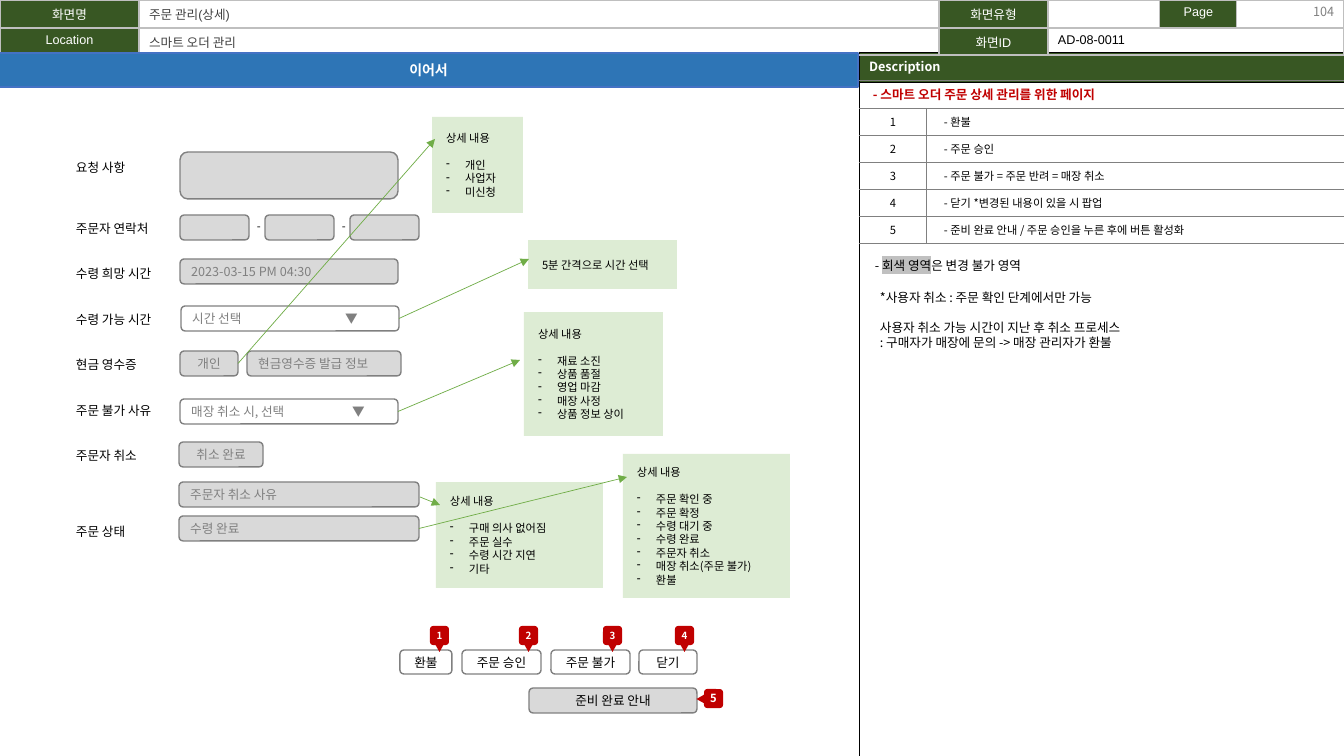
from collections import namedtuple
from lxml.etree import SubElement
from pptx import Presentation
from pptx.dml.color import RGBColor
from pptx.enum.shapes import MSO_CONNECTOR, MSO_SHAPE as SHAPE
from pptx.enum.text import MSO_ANCHOR as ANCHOR, PP_ALIGN as ALIGN
from pptx.oxml.ns import qn
from pptx.util import Pt

Box = namedtuple("Box", "x y w h")
PX_PER_INCH = 100.8
NOTO, ARIAL = "Noto Sans CJK KR", "Arial"
GREEN, RED, GRAY, LIGHT = "385723", "C00000", "808080", "D9D9D9"
WHITE, BLACK, CALLOUT = "FFFFFF", "000000", "70AD47"
LEFT, CENTER = ALIGN.LEFT, ALIGN.CENTER


def px(n):
    return round(n * 914400 / PX_PER_INCH)


def rgb(value):
    return RGBColor.from_string(value)


def place(box, x, y, w, h):
    return px(box.x + x), px(box.y + y), px(w), px(h)


def style_run(run, size, color, font=NOTO, bold=False):
    run.font.size, run.font.bold, run.font.name = Pt(size), bold, font
    run.font.color.rgb = rgb(color)
    if font == NOTO:
        SubElement(run.font._element, qn("a:ea")).set("typeface", font)


def style_text(frame, size, color, align=LEFT, font=NOTO, bold=False):
    for paragraph in frame.paragraphs:
        paragraph.alignment = align
        for run in paragraph.runs:
            style_run(run, size, color, font, bold)
        if not paragraph.runs:
            SubElement(paragraph._p, qn("a:endParaRPr")).set("sz", str(size * 100))


def add_label(slide, box, x, y, w, h, text, size=9, color=BLACK, align=LEFT, anchor=ANCHOR.MIDDLE):
    frame = slide.shapes.add_textbox(*place(box, x, y, w, h)).text_frame
    frame.word_wrap, frame.vertical_anchor = True, anchor
    frame.text = text
    style_text(frame, size, color, align)
    return frame


def add_block(shapes, box, x, y, w, h, text="", fill=LIGHT, line=GRAY, color=GRAY,
              align=LEFT, size=9, bold=False, kind=SHAPE.ROUNDED_RECTANGLE, inset=10):
    block = shapes.add_shape(kind, *place(box, x, y, w, h))
    block.shadow.inherit = False
    block.fill.solid()
    block.fill.fore_color.rgb = rgb(fill)
    if line:
        block.line.color.rgb, block.line.width = rgb(line), Pt(1)
    else:
        block.line.fill.background()
    frame = block.text_frame
    frame.margin_left = frame.margin_right = px(inset)
    frame.margin_top = frame.margin_bottom = 0
    frame.vertical_anchor = ANCHOR.MIDDLE
    frame.text = text
    style_text(frame, size, color, align, bold=bold)
    return block


def set_borders(cell, sides, color, width):
    tc_pr = cell._tc.get_or_add_tcPr()
    for index, side in enumerate("LRTB"):
        line = SubElement(tc_pr, qn(f"a:ln{side}"), w=str(Pt(width)))
        if side in sides:
            fill = SubElement(line, qn("a:solidFill"))
            SubElement(fill, qn("a:srgbClr"), val=color)
        else:
            SubElement(line, qn("a:noFill"))
        tc_pr.insert(index, line)


def add_grid(slide, box, widths, heights):
    table = slide.shapes.add_table(len(heights), len(widths), *place(box, 0, 0, sum(widths), sum(heights))).table
    table.first_row = table.horz_banding = False
    for column, width in zip(table.columns, widths):
        column.width = px(width)
    for row, height in zip(table.rows, heights):
        row.height = px(height)
    return table


def fill_cell(cell, text="", fill=None, size=9, color=BLACK, align=LEFT, font=NOTO, bold=False):
    if fill:
        cell.fill.solid()
        cell.fill.fore_color.rgb = rgb(fill)
    else:
        cell.fill.background()
    cell.text = text
    style_text(cell.text_frame, size, color, align, font, bold)


def add_arrow(slide, box, start, end, source=None):
    (x1, y1), (x2, y2) = start, end
    arrow = slide.shapes.add_connector(
        MSO_CONNECTOR.STRAIGHT, px(box.x + x1), px(box.y + y1), px(box.x + x2), px(box.y + y2))
    if source:
        arrow.begin_connect(source, 3)
    arrow.line.color.rgb, arrow.line.width = rgb(CALLOUT), Pt(0.5)
    SubElement(arrow.line._get_or_add_ln(), qn("a:tailEnd"), type="triangle")
    SubElement(arrow._element.spPr, qn("a:effectLst"))


def add_callout(slide, box, x, y, w, h, heading, items=()):
    panel = add_block(slide.shapes, box, x, y, w, h, "\n".join((heading, *items)), CALLOUT, None,
                      BLACK, size=8, kind=SHAPE.RECTANGLE, inset=14)
    SubElement(panel.fill._xPr.find(qn("a:solidFill"))[0], qn("a:alpha"), val="23000")
    first, *rest = panel.text_frame.paragraphs
    if rest:
        first.space_after = Pt(9.6)
    for paragraph in rest:
        p_pr = paragraph._p.get_or_add_pPr()
        p_pr.set("marL", str(px(19)))
        p_pr.set("indent", str(-px(19)))
        SubElement(p_pr, qn("a:buChar"), char="-")


def add_badge(slide, box, x, y, number, size=7, pointer=(5, 18), turn=180):
    shapes = slide.shapes.add_group_shape().shapes
    tip = add_block(shapes, box, x + pointer[0], y + pointer[1], 9, 8, fill=RED, line=None,
                    kind=SHAPE.ISOSCELES_TRIANGLE)
    tip.rotation = turn
    add_block(shapes, box, x, y, 19, 19, number, RED, None, WHITE, CENTER, size, True, inset=0)


def build_header(slide, box):
    table = add_grid(slide, box, [139, 800, 109, 112, 77, 107], [28, 27])
    rows = [["화면명", "주문 관리(상세)", "화면유형", "", "Page", ""],
            ["Location", "스마트 오더 관리", "화면ID", "AD-08-0011", "", ""]]
    titles = {"화면명", "화면유형", "Page", "Location", "화면ID"}
    for r, row in enumerate(rows):
        for c, text in enumerate(row):
            cell = table.cell(r, c)
            if text in titles:
                fill_cell(cell, text, GREEN, color=WHITE, align=CENTER, font=ARIAL)
            else:
                fill_cell(cell, text, color="404040" if c == 1 else BLACK, font=ARIAL)
            set_borders(cell, "LRTB", "BFBFBF", 1)
    table.cell(1, 3).merge(table.cell(1, 5))
    add_label(slide, box, 1041, -8, 303, 40, "104", color=GRAY, align=ALIGN.RIGHT)


def build_description(slide, box):
    # Frame with its heading
    frame = add_grid(slide, box, [box.w], [30, box.h - 30])
    fill_cell(frame.cell(0, 0), "Description", GREEN, color=WHITE, bold=True)
    fill_cell(frame.cell(1, 0))
    for cell in frame.iter_cells():
        set_borders(cell, "LRTB", BLACK, 0.5)

    # Numbered functions
    functions = ["환불", "주문 승인", "주문 불가 = 주문 반려 = 매장 취소",
                 "닫기 *변경된 내용이 있을 시 팝업", "준비 완료 안내 / 주문 승인을 누른 후에 버튼 활성화"]
    table = add_grid(slide, box._replace(y=box.y + 28), [68, box.w - 68], [27] * 6)
    fill_cell(table.cell(0, 0), "- 스마트 오더 주문 상세 관리를 위한 페이지", color=RED, bold=True)
    fill_cell(table.cell(0, 1))
    for number, function in enumerate(functions, 1):
        fill_cell(table.cell(number, 0), str(number), size=8, align=CENTER)
        fill_cell(table.cell(number, 1), "- " + function, size=8)
        table.cell(number, 1).margin_left = px(17)
    for index, cell in enumerate(table.iter_cells()):
        cell.vertical_anchor = ANCHOR.MIDDLE
        set_borders(cell, "LTB" if index > 1 and index % 2 else "TB", GRAY, 0.75)
    table.cell(0, 0).merge(table.cell(0, 1))
    table.cell(0, 0).margin_left = px(14)

    # Notes below the table
    note = add_label(slide, box, 6, 201, 197, 25, "").paragraphs[0]
    for text in ("- ", "회색 영역", "은 변경 불가 영역"):
        run = note.add_run()
        run.text = text
        style_run(run, 9, BLACK)
    mark = SubElement(note.runs[1].font._element, qn("a:highlight"))
    SubElement(mark, qn("a:srgbClr"), val="C0C0C0")
    note.runs[1].font._element.find(qn("a:latin")).addprevious(mark)
    cancel = add_label(slide, box, 11, 233, 423, 87, "*사용자 취소 : 주문 확인 단계에서만 가능\n"
                       "사용자 취소 가능 시간이 지난 후 취소 프로세스\n: 구매자가 매장에 문의 -> 매장 관리자가 환불",
                       anchor=ANCHOR.TOP)
    cancel.paragraphs[1].space_before = Pt(10.8)


def build_form(slide, box):
    # Title bar
    add_block(slide.shapes, box, -1, -35, box.w, 34, "이어서", "2E75B6", "4472C4", WHITE, CENTER, 10, True,
              SHAPE.RECTANGLE)

    # Field names
    names = {"요청 사항": 80, "주문자 연락처": 141, "수령 희망 시간": 186, "수령 가능 시간": 232,
             "현금 영수증": 277, "주문 불가 사유": 323, "주문자 취소": 368, "주문 상태": 444}
    for name, middle in names.items():
        add_label(slide, box, 66, middle - 13, 113, 25, name)

    # Fields
    def field(x, y, w, text="", h=25, **look):
        return add_block(slide.shapes, box, x, y, w, h, text, **look)

    def dropdown(x, y, text, tab):
        block = field(x, y, 218, text + "\t▼", fill=WHITE)
        stops = SubElement(block.text_frame.paragraphs[0]._p.get_or_add_pPr(), qn("a:tabLst"))
        SubElement(stops, qn("a:tab"), pos=str(px(tab)), algn="l")
        return block

    field(180, 64, 218, h=47)
    for part in range(3):
        field(180 + 85 * part, 127, 69)
    for dash in range(2):
        add_label(slide, box, 247 + 85 * dash, 126, 21, 24, "-", 8, align=CENTER)
    field(180, 171, 218, "2023-03-15 PM 04:30")
    pickup = dropdown(181, 218, "시간 선택", 153)
    receipt = field(180, 263, 58, "개인", align=CENTER)
    field(247, 263, 154, "현금영수증 발급 정보")
    refusal = dropdown(180, 311, "매장 취소 시, 선택", 161)
    field(179, 354, 84, "취소 완료", align=CENTER)
    field(179, 394, 240, "주문자 취소 사유")
    status = field(179, 428, 240, "수령 완료")

    # Callouts and their arrows
    heading = "상세 내용"
    add_callout(slide, box, 432, 29, 91, 96, heading, ["개인", "사업자", "미신청"])
    add_callout(slide, box, 528, 152, 149, 49, "5분 간격으로 시간 선택")
    add_callout(slide, box, 524, 224, 139, 124, heading,
                ["재료 소진", "상품 품절", "영업 마감", "매장 사정", "상품 정보 상이"])
    add_callout(slide, box, 436, 394, 167, 106, heading, ["구매 의사 없어짐", "주문 실수", "수령 시간 지연", "기타"])
    add_callout(slide, box, 623, 366, 167, 144, heading,
                ["주문 확인 중", "주문 확정", "수령 대기 중", "수령 완료", "주문자 취소", "매장 취소(주문 불가)", "환불"])
    add_arrow(slide, box, (238, 276), (435, 51), receipt)
    add_arrow(slide, box, (399, 231), (529, 171), pickup)
    add_arrow(slide, box, (398, 324), (520, 272), refusal)
    add_arrow(slide, box, (420, 409), (440, 417))
    add_arrow(slide, box, (419, 441), (627, 389), status)

    # Buttons with numbered badges
    buttons = [("환불", 400, 52, 430), ("주문 승인", 462, 79, 519),
               ("주문 불가", 551, 79, 603), ("닫기", 639, 58, 675)]
    for number, (name, x, w, badge_x) in enumerate(buttons, 1):
        field(x, 562, w, name, h=24, fill=WHITE, color=BLACK, align=CENTER, inset=0)
        add_badge(slide, box, badge_x, 538, str(number))
    field(529, 600, 168, "준비 완료 안내", color=BLACK, align=CENTER)
    add_badge(slide, box, 704, 601, "5", 8, (-8, 6), 270)


def main():
    deck = Presentation()
    deck.slide_width, deck.slide_height = px(1344), px(756)
    slide = deck.slides.add_slide(deck.slide_layouts[6])
    build_description(slide, Box(859, 52, 485, 704))
    build_header(slide, Box(0, 0, 1344, 55))
    build_form(slide, Box(0, 88, 859, 668))
    deck.save("out.pptx")


if __name__ == "__main__":
    main()
